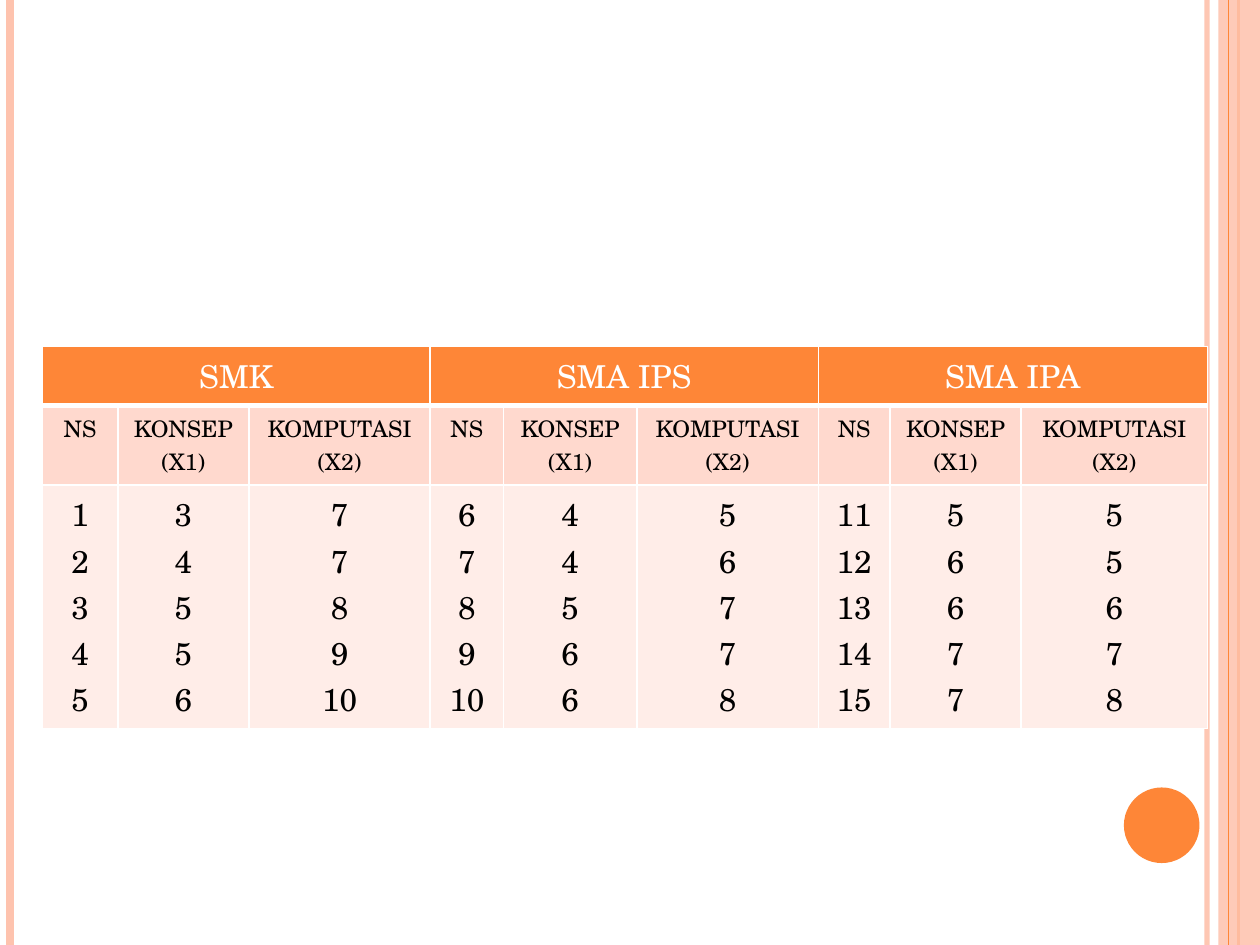
from lxml import etree
from pptx import Presentation
from pptx import util as u
from pptx.dml.color import RGBColor
from pptx.enum import shapes, text
from pptx.oxml.ns import qn

COLORS = {"accent": "FE8637", "pale": "FEC3AE", "label": "FFD9CE",
          "body": "FFEDE8", "white": "FFFFFF", "black": "000000"}
FONT = "TeX Gyre Schola"
WIDTH, HEIGHT = 10, 7.5


def rgb(name):
    return RGBColor.from_string(COLORS[name])


def write(frame, lines, size=18, color="black"):
    """Fill a text frame with one centred paragraph per line."""
    for index, line in enumerate(lines):
        para = frame.paragraphs[0] if index == 0 else frame.add_paragraph()
        para.alignment = text.PP_ALIGN.CENTER
        span = para.add_run()
        span.text = str(line)
        span.font.name, span.font.size = FONT, u.Pt(size)
        span.font.color.rgb = rgb(color)


def set_alpha(fill_parent, percent):
    color = next(fill_parent.iter(qn("a:srgbClr")))
    etree.SubElement(color, qn("a:alpha"), val=str(percent * 1000))


class SlideBuilder:
    """Places elements by shares of the slide's width and height."""

    def __init__(self, deck):
        self.deck = deck
        self.page = deck.slides.add_slide(deck.slide_layouts[6])

    def across(self, share):
        return round(self.deck.slide_width * share)

    def down(self, share):
        return round(self.deck.slide_height * share)

    def vertical_line(self, x, color, width, alpha=None):
        line = self.page.shapes.add_connector(
            shapes.MSO_CONNECTOR.STRAIGHT, self.across(x), 0, self.across(x), self.down(1))
        line.line.color.rgb, line.line.width = rgb(color), u.Pt(width)
        properties = line._element.spPr
        etree.SubElement(properties, qn("a:effectLst"))
        if alpha:
            set_alpha(properties, alpha)

    def shape(self, kind, x, y, width, height, color, alpha=None):
        box = self.page.shapes.add_shape(
            kind, self.across(x), self.down(y), self.across(width), self.down(height))
        box.shadow.inherit = False
        box.fill.solid()
        box.fill.fore_color.rgb = rgb(color)
        box.line.fill.background()
        if alpha:
            set_alpha(box._element.spPr, alpha)

    def table(self, x, y, columns, rows):
        grid = self.page.shapes.add_table(
            len(rows), len(columns), self.across(x), self.down(y),
            self.across(sum(columns)), self.down(sum(rows))).table
        for column, share in zip(grid.columns, columns):
            column.width = self.across(share)
        for row, share in zip(grid.rows, rows):
            row.height = self.down(share)
        return grid

    def cell(self, cell, lines, fill, bottom=1, **format):
        properties = cell._tc.get_or_add_tcPr()
        for side in "LRTB":
            width = bottom if side == "B" else 1
            border = etree.SubElement(properties, qn(f"a:ln{side}"), w=str(u.Pt(width)))
            solid = etree.SubElement(border, qn("a:solidFill"))
            etree.SubElement(solid, qn("a:srgbClr"), val=COLORS["white"])
        cell.fill.solid()
        cell.fill.fore_color.rgb = rgb(fill)
        write(cell.text_frame, lines, **format)


def main():
    deck = Presentation()
    deck.slide_width, deck.slide_height = u.Inches(WIDTH), u.Inches(HEIGHT)
    slide = SlideBuilder(deck)

    # Side stripes and corner dot
    slide.vertical_line(0.958, "pale", 3, alpha=93)
    slide.vertical_line(0.008, "pale", 4.5)
    slide.vertical_line(0.983, "accent", 1.5)
    slide.shape(shapes.MSO_SHAPE.RECTANGLE, 0.967, 0, 0.033, 1, "pale", alpha=87)
    slide.vertical_line(0.975, "accent", 0.75)
    slide.shape(shapes.MSO_SHAPE.OVAL, 0.892, 6.25 / HEIGHT, 0.06, 0.08, "accent")

    # Scores by school: number, concept (X1), computation (X2)
    schools = {
        "SMK": ([1, 2, 3, 4, 5], [3, 4, 5, 5, 6], [7, 7, 8, 9, 10]),
        "SMA IPS": ([6, 7, 8, 9, 10], [4, 4, 5, 6, 6], [5, 6, 7, 7, 8]),
        "SMA IPA": ([11, 12, 13, 14, 15], [5, 6, 6, 7, 7], [5, 5, 6, 7, 8]),
    }
    labels = (["NS"], ["KONSEP", "(X1)"], ["KOMPUTASI", "(X2)"])
    widths = [0.6, 1.04, 1.44, 0.58, 1.06, 1.44, 0.57, 1.04, 1.48]
    heights = [0.46, 0.63, 1.93]
    grid = slide.table(0.0335, 2.75 / HEIGHT, [width / WIDTH for width in widths],
                       [height / HEIGHT for height in heights])

    for group, (school, scores) in enumerate(schools.items()):
        first = group * len(labels)
        grid.cell(0, first).merge(grid.cell(0, first + len(labels) - 1))
        for offset, (label, values) in enumerate(zip(labels, scores)):
            column = first + offset
            slide.cell(grid.cell(0, column), [] if offset else [school], "accent",
                       bottom=3, color="white")
            slide.cell(grid.cell(1, column), label, "label", size=13)
            slide.cell(grid.cell(2, column), values, "body")

    deck.save("out.pptx")


if __name__ == "__main__":
    main()
